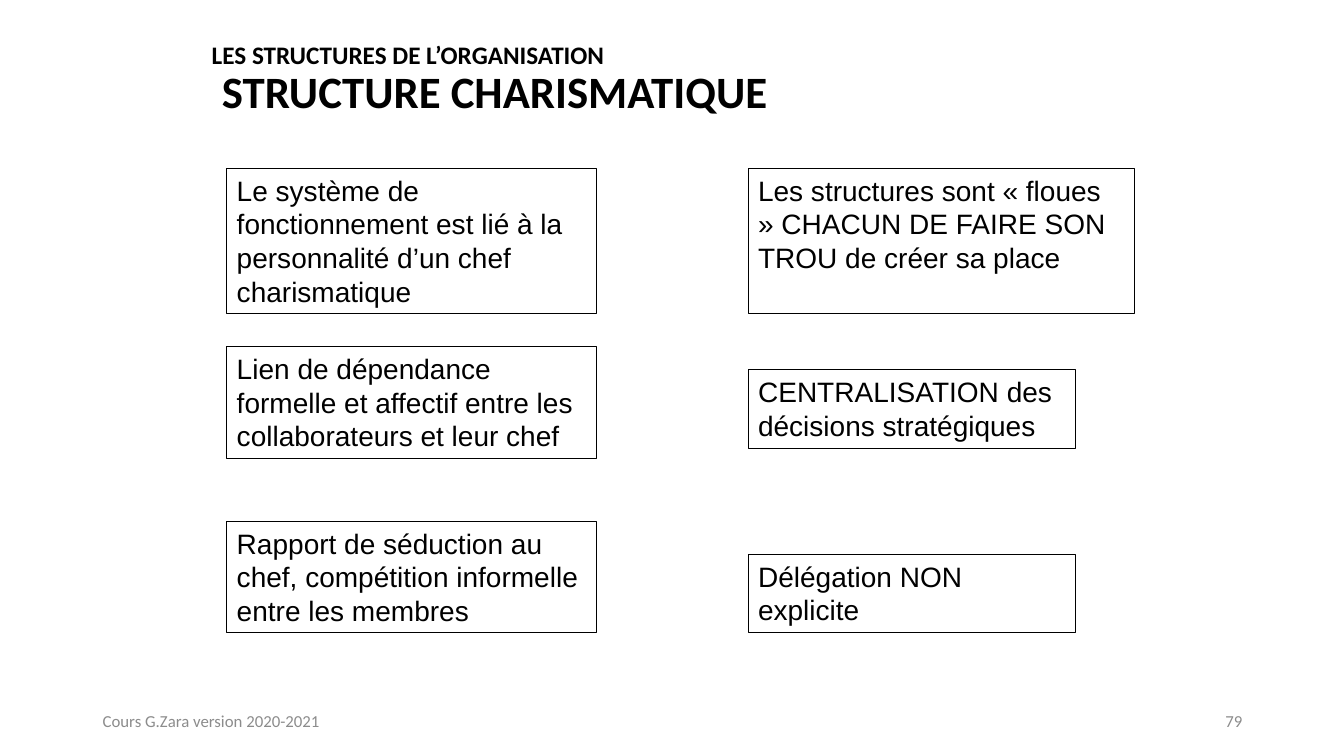
from pptx import Presentation
from pptx.dml.color import RGBColor
from pptx.enum.shapes import MSO_SHAPE
from pptx.enum.text import MSO_ANCHOR, MSO_AUTO_SIZE, PP_ALIGN
from pptx.util import Inches, Pt

COLORS = {"ink": "000000", "muted": "8C8C8C"}
HEADING = [("LES STRUCTURES DE L’ORGANISATION", 18), (" STRUCTURE CHARISMATIQUE", 32)]
COLUMNS = [
    (2.25, [
        (1.67, 3.67, 4, "Le système de fonctionnement est lié à la personnalité d’un chef charismatique"),
        (3.44, 3.67, 3, "Lien de dépendance formelle et affectif entre les collaborateurs et leur chef"),
        (5.17, 3.67, 3, "Rapport de séduction au chef, compétition informelle entre les membres"),
    ]),
    (7.42, [
        (1.67, 3.83, 4, "Les structures sont « floues » CHACUN DE FAIRE SON TROU de créer sa place"),
        (3.67, 3.25, 2, "CENTRALISATION des décisions stratégiques"),
        (5.5, 3.25, 2, "Délégation NON explicite"),
    ]),
]
FOOTER = [
    (0.92, PP_ALIGN.LEFT, "Cours G.Zara version 2020-2021"),
    (9.42, PP_ALIGN.RIGHT, "79"),
]
LINE_HEIGHT, BOX_PADDING = 0.333, 0.11


def add_text(paragraph, text, size, font, color="ink", bold=False):
    run = paragraph.add_run()
    run.text = text
    run.font.size = Pt(size)
    run.font.name = font
    run.font.bold = bold
    run.font.color.rgb = RGBColor.from_string(COLORS[color])


def add_heading(slide):
    heading = slide.shapes.title
    heading.left, heading.top = Inches(2), Inches(0.17)
    heading.width, heading.height = Inches(9), Inches(1.25)
    heading.text_frame.vertical_anchor = MSO_ANCHOR.MIDDLE
    paragraph = heading.text_frame.paragraphs[0]
    paragraph.alignment = PP_ALIGN.LEFT
    paragraph.line_spacing = 0.9
    for index, (text, size) in enumerate(HEADING):
        if index:
            paragraph.add_line_break()
        add_text(paragraph, text, size, "Calibri", bold=True)


def add_trait(slide, left, top, width, lines, text):
    height = lines * LINE_HEIGHT + BOX_PADDING
    trait = slide.shapes.add_shape(
        MSO_SHAPE.RECTANGLE, Inches(left), Inches(top), Inches(width), Inches(height))
    trait.shadow.inherit = False
    trait.fill.background()
    trait.line.color.rgb = RGBColor.from_string(COLORS["ink"])
    trait.line.width = Pt(0.75)
    frame = trait.text_frame
    frame.word_wrap = True
    frame.auto_size = MSO_AUTO_SIZE.SHAPE_TO_FIT_TEXT
    frame.vertical_anchor = MSO_ANCHOR.TOP
    frame.paragraphs[0].alignment = PP_ALIGN.LEFT
    add_text(frame.paragraphs[0], text, 20, "Arial")


def add_footer(slide, left, alignment, text):
    footer = slide.shapes.add_textbox(Inches(left), Inches(6.95), Inches(3), Inches(0.4))
    frame = footer.text_frame
    frame.word_wrap = True
    frame.vertical_anchor = MSO_ANCHOR.MIDDLE
    frame.paragraphs[0].alignment = alignment
    add_text(frame.paragraphs[0], text, 12, "Calibri", "muted")


def main():
    deck = Presentation()
    deck.slide_width, deck.slide_height = Inches(13.33), Inches(7.5)
    slide = deck.slides.add_slide(deck.slide_layouts[5])
    add_heading(slide)
    for left, traits in COLUMNS:
        for trait in traits:
            add_trait(slide, left, *trait)
    for entry in FOOTER:
        add_footer(slide, *entry)
    deck.save("out.pptx")


if __name__ == "__main__":
    main()
